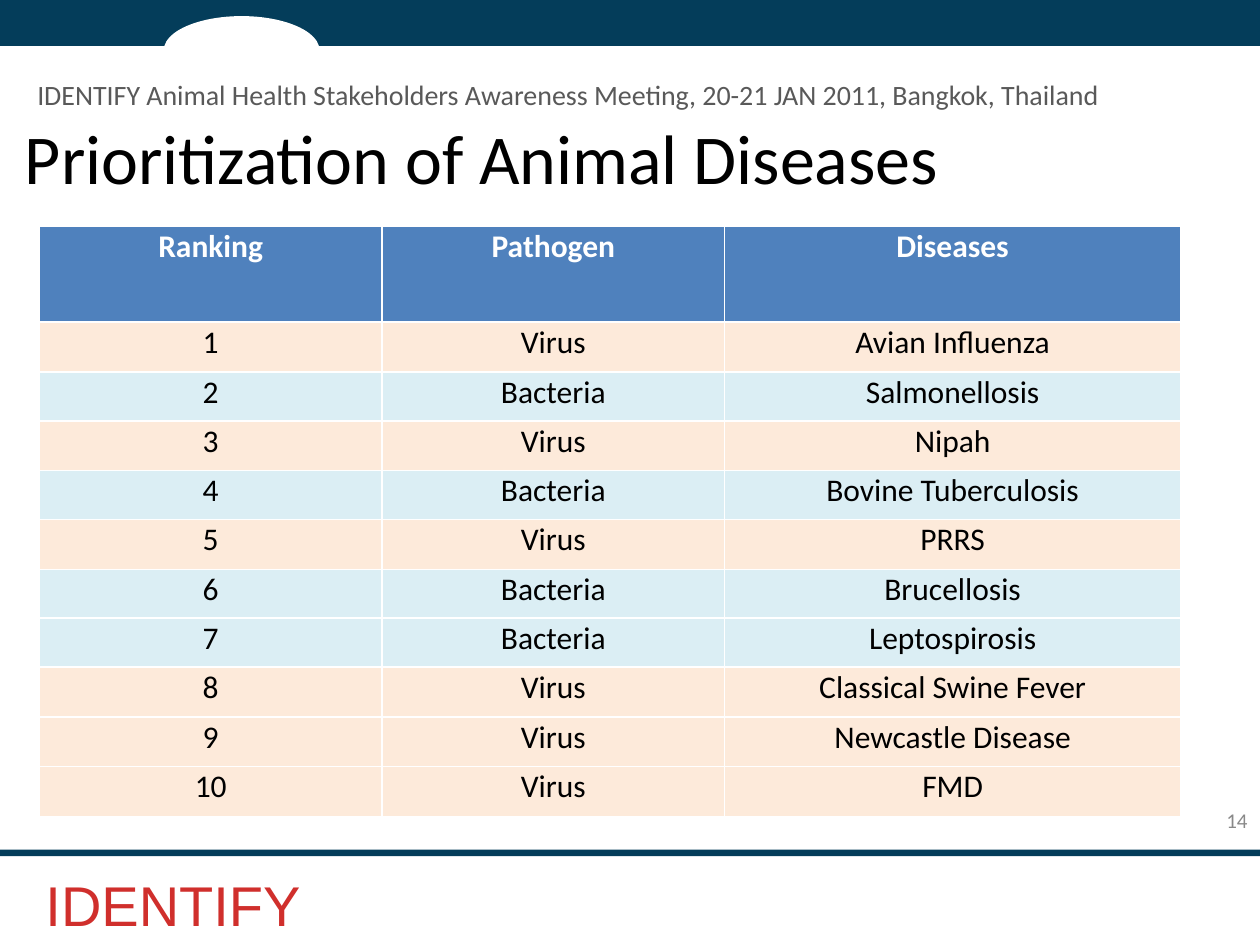
from lxml.etree import SubElement
from pptx import Presentation
from pptx.dml.color import RGBColor as RGB
from pptx.enum.shapes import MSO_SHAPE as Kind
from pptx.enum.text import MSO_ANCHOR as Anchor, PP_ALIGN as Align
from pptx.oxml.ns import qn
from pptx.util import Pt

HUES = {
    "navy": "043D5A", "white": "FFFFFF", "black": "000000", "red": "D02F2C",
    "gray": "595959", "pale": "898989", "head": "4F81BD",
    "Virus": "FDEADA", "Bacteria": "DBEEF4",
}
ROWS = [
    ("Virus", "Avian Influenza"), ("Bacteria", "Salmonellosis"),
    ("Virus", "Nipah"), ("Bacteria", "Bovine Tuberculosis"),
    ("Virus", "PRRS"), ("Bacteria", "Brucellosis"),
    ("Bacteria", "Leptospirosis"), ("Virus", "Classical Swine Fever"),
    ("Virus", "Newcastle Disease"), ("Virus", "FMD"),
]
TALL = {"head": 54.7, "Virus": 28.5, "Bacteria": 27.9}


def hue(name):
    return RGB.from_string(HUES[name])


def style(para, size, color, face="Calibri", bold=False, align=Align.LEFT):
    para.alignment = align
    font = para.font
    font.name, font.size, font.bold = face, Pt(size), bold
    font.color.rgb = hue(color)


def add_block(slide, kind, box, color):
    shape = slide.shapes.add_shape(kind, *map(Pt, box))
    shape.shadow.inherit = False
    shape.fill.solid()
    shape.fill.fore_color.rgb = hue(color)
    shape.line.fill.background()
    return shape


def add_text(slide, box, text, size, color, anchor=Anchor.TOP, wrap=True, **look):
    frame = slide.shapes.add_textbox(*map(Pt, box)).text_frame
    frame.word_wrap = wrap
    frame.vertical_anchor = anchor
    frame.text = text
    style(frame.paragraphs[0], size, color, **look)


def add_edges(cell, base):
    props = cell._tc.get_or_add_tcPr()
    for side in "LRTB":
        width = base if side == "B" else 1
        line = SubElement(props, qn(f"a:ln{side}"), w=str(Pt(width)))
        fill = SubElement(line, qn("a:solidFill"))
        SubElement(fill, qn("a:srgbClr"), val=HUES["white"])


def fill_cell(cell, text, color, head):
    cell.margin_left = cell.margin_right = cell.margin_top = Pt(0.7)
    cell.margin_bottom = 0
    add_edges(cell, 1.5 if head else 1)
    cell.fill.solid()
    cell.fill.fore_color.rgb = hue(color)
    cell.text = text
    style(cell.text_frame.paragraphs[0], 18, "white" if head else "black",
          bold=head, align=Align.CENTER)


def add_ranks(slide):
    lines = [("head", ("Ranking", "Pathogen", "Diseases"))]
    lines += [(germ, (str(rank), germ, name))
              for rank, (germ, name) in enumerate(ROWS, 1)]
    wide = [195.8, 195.8, 260.6]
    high = [TALL[key] for key, _ in lines]
    table = slide.shapes.add_table(
        len(lines), len(wide), Pt(22.5), Pt(129.4),
        Pt(sum(wide)), Pt(sum(high))).table
    table.horz_banding = False
    for col, width in zip(table.columns, wide):
        col.width = Pt(width)
    for row, height, (key, words) in zip(table.rows, high, lines):
        row.height = Pt(height)
        for cell, word in zip(row.cells, words):
            fill_cell(cell, word, key, key == "head")


def main():
    deck = Presentation()
    deck.slide_width, deck.slide_height = Pt(720), Pt(540)
    slide = deck.slides.add_slide(deck.slide_layouts[6])

    # Top band with its white arch, and the foot rule
    add_block(slide, Kind.RECTANGLE, (0, -2, 723, 28.2), "navy")
    add_block(slide, Kind.OVAL, (93.6, 9.2, 89, 39), "white")
    add_block(slide, Kind.RECTANGLE, (0, 485.5, 720, 3.8), "navy")

    # Programme name
    add_text(slide, (17.3, 494, 163.4, 46.8), "IDENTIFY", 32, "red",
             wrap=False, face="Arial", align=Align.CENTER)

    # Title, ranking table, page number and meeting line
    add_text(slide, (7.2, 44.6, 648, 90), "Prioritization of Animal Diseases",
             40, "black", Anchor.MIDDLE)
    add_ranks(slide)
    add_text(slide, (552, 454, 168, 28.8), "14", 12, "pale", Anchor.MIDDLE,
             align=Align.RIGHT)
    add_text(slide, (14.2, 41, 633, 26.6),
             "IDENTIFY Animal Health Stakeholders Awareness Meeting, "
             "20-21 JAN 2011, Bangkok, Thailand", 16, "gray", wrap=False)

    deck.save("out.pptx")


if __name__ == "__main__":
    main()
